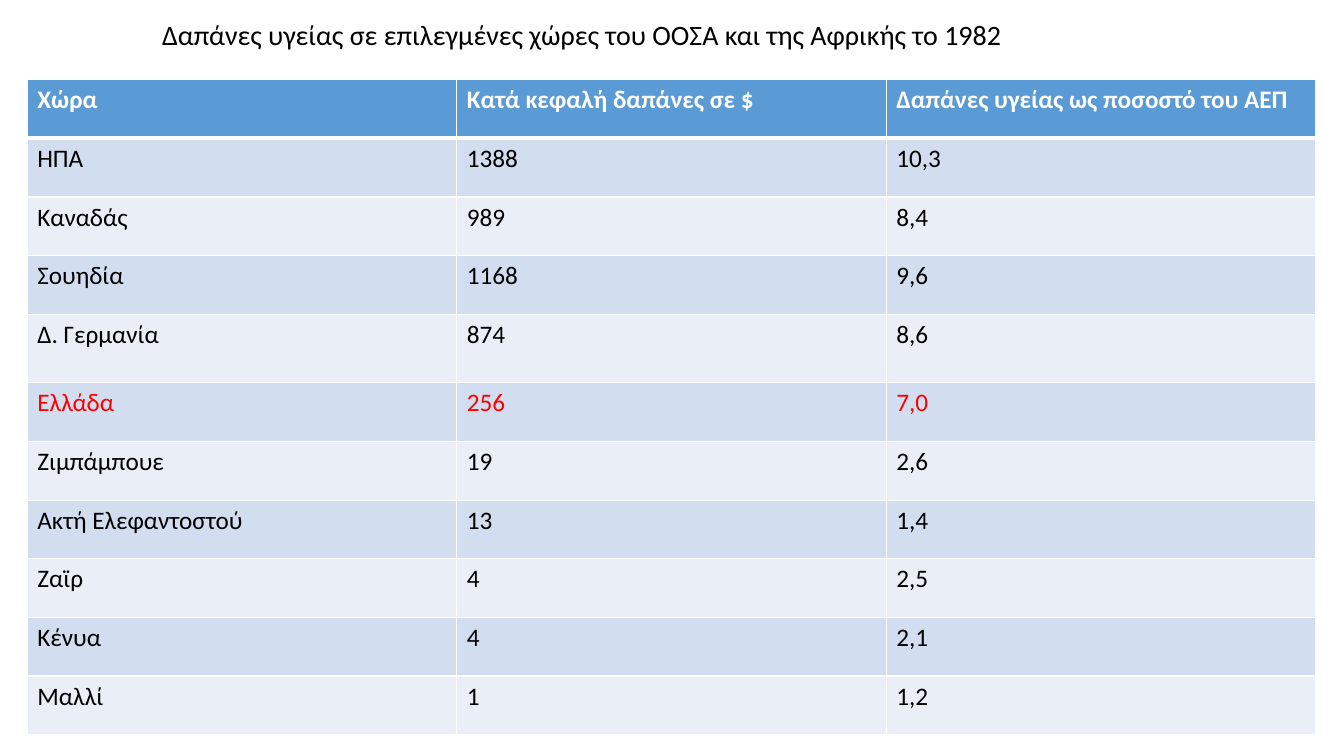
from dataclasses import dataclass

from pptx import Presentation
from pptx import util as u
from pptx.dml.color import RGBColor
from pptx.enum import text
from pptx.oxml import parse_xml
from pptx.oxml.ns import nsdecls


@dataclass(frozen=True)
class Theme:
    font: str = "Calibri"
    title_size: int = 20
    cell_size: int = 18
    ink: str = "000000"
    accent: str = "FF0000"
    header_ink: str = "FFFFFF"
    header_fill: str = "5B9BD5"
    bands: tuple = ("D2DEEF", "EAEFF7")
    border: str = "FFFFFF"
    thin: int = 1
    thick: int = 3


TITLE = "Δαπάνες υγείας σε επιλεγμένες χώρες του ΟΟΣΑ και της Αφρικής το 1982"
HEADER = ("Χώρα", "Κατά κεφαλή δαπάνες σε $", "Δαπάνες υγείας ως ποσοστό του ΑΕΠ")
SPENDING = [
    ("ΗΠΑ", "1388", "10,3"),
    ("Καναδάς", "989", "8,4"),
    ("Σουηδία", "1168", "9,6"),
    ("Δ. Γερμανία", "874", "8,6"),
    ("Ελλάδα", "256", "7,0"),
    ("Ζιμπάμπουε", "19", "2,6"),
    ("Ακτή Ελεφαντοστού", "13", "1,4"),
    ("Ζαϊρ", "4", "2,5"),
    ("Κένυα", "4", "2,1"),
    ("Μαλλί", "1", "1,2"),
]
HIGHLIGHT = "Ελλάδα"
TALL_ROW = "Δ. Γερμανία"
TALL_HEIGHT = 0.68


class SlideBuilder:
    def __init__(self, s, theme):
        self.s = s
        self.theme = theme

    def set_text(self, tf, content, size, color, bold=False):
        p = tf.paragraphs[0]
        p.text = content
        p.font.name = self.theme.font
        p.font.size = u.Pt(size)
        p.font.bold = bold
        p.font.color.rgb = RGBColor.from_string(color)

    def textbox(self, content, x, y, w, h):
        sp = self.s.shapes.add_textbox(*map(u.Inches, (x, y, w, h)))
        tf = sp.text_frame
        tf.word_wrap = True
        tf.auto_size = text.MSO_AUTO_SIZE.SHAPE_TO_FIT_TEXT
        self.set_text(tf, content, self.theme.title_size, self.theme.ink)

    def borders(self, cell, top, bottom):
        tc_pr = cell._tc.get_or_add_tcPr()
        thin = self.theme.thin
        for side, width in (("L", thin), ("R", thin), ("T", top), ("B", bottom)):
            tc_pr.append(parse_xml(
                f'<a:ln{side} {nsdecls("a")} w="{u.Pt(width)}"><a:solidFill>'
                f'<a:srgbClr val="{self.theme.border}"/></a:solidFill></a:ln{side}>'))

    def cell(self, cell, content, fill, color, bold, top, bottom):
        self.borders(cell, top, bottom)
        cell.fill.solid()
        cell.fill.fore_color.rgb = RGBColor.from_string(fill)
        self.set_text(cell.text_frame, content, self.theme.cell_size, color, bold)

    def table(self, rows, x, y, w, h):
        t = self.theme
        frame = self.s.shapes.add_table(len(rows), len(rows[0]), *map(u.Inches, (x, y, w, h)))
        table = frame.table
        for column in table.columns:
            column.width = u.Inches(w / len(rows[0]))
        # Every row but the tall one shares the remaining height
        row_height = (h - TALL_HEIGHT) / (len(rows) - 1)
        for i, row in enumerate(rows):
            table.rows[i].height = u.Inches(TALL_HEIGHT if row[0] == TALL_ROW else row_height)
            header = i == 0
            fill = t.header_fill if header else t.bands[(i - 1) % 2]
            color = t.header_ink if header else t.accent if row[0] == HIGHLIGHT else t.ink
            top = t.thick if i == 1 else t.thin
            bottom = t.thick if header else t.thin
            for j, content in enumerate(row):
                self.cell(table.cell(i, j), content, fill, color, header, top, bottom)


def main():
    prs = Presentation()
    prs.slide_width, prs.slide_height = u.Inches(13.33), u.Inches(7.5)
    builder = SlideBuilder(prs.slides.add_slide(prs.slide_layouts[6]), Theme())

    # Spending table
    builder.table([HEADER] + SPENDING, 0.27, 0.79, 12.78, 6.5)

    # Title
    builder.textbox(TITLE, 1.51, 0.12, 8.85, 0.44)

    prs.save("out.pptx")


if __name__ == "__main__":
    main()
